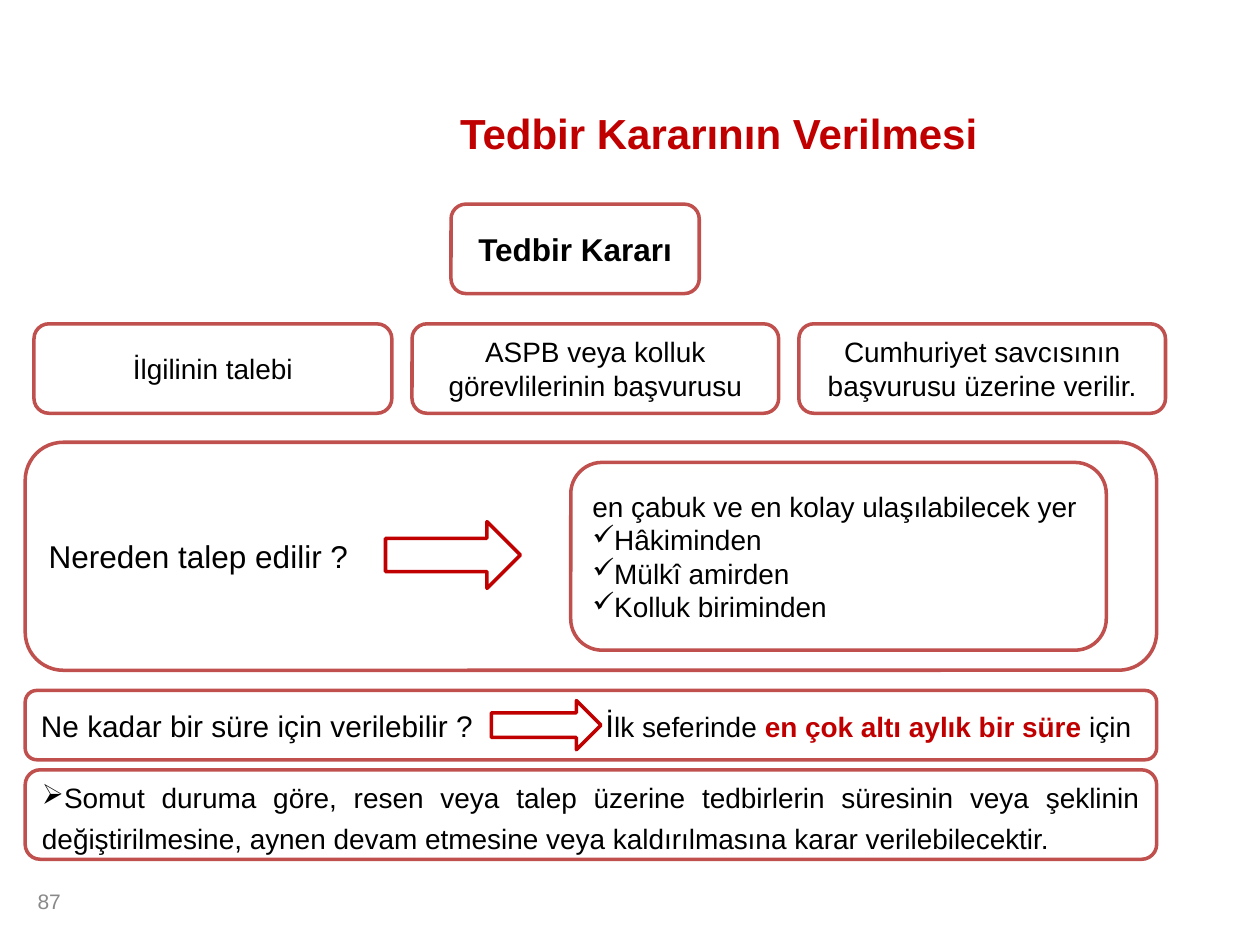
import pptx
import pptx.util
import pptx.dml.color
import pptx.enum.shapes
import pptx.enum.text
import pptx.oxml.ns
from lxml import etree

RED = pptx.dml.color.RGBColor(0xC0, 0x00, 0x00)
BORDER = pptx.dml.color.RGBColor(0xC0, 0x50, 0x4D)
BLACK = pptx.dml.color.RGBColor(0x00, 0x00, 0x00)
WHITE = pptx.dml.color.RGBColor(0xFF, 0xFF, 0xFF)
GREY = pptx.dml.color.RGBColor(0x89, 0x89, 0x89)

LEFT = pptx.enum.text.PP_ALIGN.LEFT
CENTER = pptx.enum.text.PP_ALIGN.CENTER
JUSTIFY = pptx.enum.text.PP_ALIGN.JUSTIFY
TOP = pptx.enum.text.MSO_ANCHOR.TOP
MIDDLE = pptx.enum.text.MSO_ANCHOR.MIDDLE
SHAPES = pptx.enum.shapes.MSO_SHAPE

COLUMNS, ROWS = 100, 75  # grid cells across and down the slide


class SlideBuilder:
    font = "Arial"
    line_width = pptx.util.Pt(2)

    def __init__(self, presentation):
        self.cell_width = presentation.slide_width / COLUMNS
        self.cell_height = presentation.slide_height / ROWS
        self.slide = presentation.slides.add_slide(presentation.slide_layouts[5])

    def area(self, column, row, columns, rows):
        """Turn grid cells into left, top, width and height."""
        return (round(column * self.cell_width), round(row * self.cell_height),
                round(columns * self.cell_width), round(rows * self.cell_height))

    def run(self, paragraph, text, size=16, color=BLACK, bold=False):
        run = paragraph.add_run()
        run.text = text
        run.font.name = self.font
        run.font.size = pptx.util.Pt(size)
        run.font.color.rgb = color
        run.font.bold = bold

    def paragraph(self, frame, runs, align=LEFT, bullet=None, tab=None, spacing=None):
        """Fill the empty first paragraph, or add one; each run is a tuple."""
        first = frame.paragraphs[0]
        paragraph = frame.add_paragraph() if first.runs else first
        paragraph.alignment = align
        if spacing:
            paragraph.line_spacing = spacing
        properties = paragraph._p.get_or_add_pPr()
        qn = pptx.oxml.ns.qn
        if bullet:
            properties.set("marL", "0")
            properties.set("indent", "0")
            etree.SubElement(properties, qn("a:buChar"), char=bullet)
        if tab:
            stops = etree.SubElement(properties, qn("a:tabLst"))
            etree.SubElement(stops, qn("a:tab"),
                             pos=str(round(tab * self.cell_width)), algn="l")
        for run in runs:
            self.run(paragraph, *run)

    def frame(self, shape, anchor=MIDDLE):
        frame = shape.text_frame
        frame.word_wrap = True
        frame.auto_size = pptx.enum.text.MSO_AUTO_SIZE.NONE
        frame.vertical_anchor = anchor
        return frame

    def title(self, area, text):
        title = self.slide.shapes.title
        title.left, title.top, title.width, title.height = self.area(*area)
        self.paragraph(self.frame(title, TOP), [(text, 24, RED, True)], CENTER)

    def label(self, area, *run):
        box = self.slide.shapes.add_textbox(*self.area(*area))
        self.paragraph(self.frame(box), [run])

    def outline(self, kind, area, color):
        shape = self.slide.shapes.add_shape(kind, *self.area(*area))
        shape.shadow.inherit = False
        shape.line.color.rgb = color
        shape.line.width = self.line_width
        return shape

    def box(self, area, runs, align=LEFT, **options):
        shape = self.outline(SHAPES.ROUNDED_RECTANGLE, area, BORDER)
        shape.fill.solid()
        shape.fill.fore_color.rgb = WHITE
        frame = self.frame(shape)
        self.paragraph(frame, runs, align, **options)
        return frame

    def arrow(self, area):
        self.outline(SHAPES.RIGHT_ARROW, area, RED).fill.background()


def main():
    presentation = pptx.Presentation()
    presentation.slide_width = pptx.util.Inches(10)
    presentation.slide_height = pptx.util.Inches(7.5)
    builder = SlideBuilder(presentation)

    # Title, slide number and the decision at the top
    builder.title((29.5, 8, 55.1, 5.1), "Tedbir Kararının Verilmesi")
    builder.label((2, 69.5, 23.3, 4), "87", 12, GREY)
    builder.box((35.8, 16.2, 19.7, 7.1), [("Tedbir Kararı", 18, BLACK, True)], CENTER)

    # Three ways to start the process
    column, gap = 2.7, 1.6
    for text, width in (("İlgilinin talebi", 28.4),
                        ("ASPB veya kolluk görevlilerinin başvurusu", 29.1),
                        ("Cumhuriyet savcısının başvurusu üzerine verilir.", 29.1)):
        builder.box((column, 25.7, width, 7.1), [(text,)], CENTER)
        column += width + gap

    # Where to apply
    left, width = 2, 89.8
    builder.box((left, 35.1, width, 18.1), [("Nereden talep edilir ?", 18)])
    builder.arrow((30.6, 41.4, 10.7, 5.3))
    places = builder.box((45.3, 36.7, 42.5, 14.9),
                         [("en çabuk ve en kolay ulaşılabilecek yer",)])
    for place in ("Hâkiminden", "Mülkî amirden", "Kolluk biriminden"):
        builder.paragraph(places, [(place,)], JUSTIFY, bullet="✓")

    # How long it lasts
    builder.box((left, 54.8, width, 5.5),
                [("Ne kadar bir süre için verilebilir ?\t", 17), ("İ", 18),
                 ("lk seferinde ",), ("en çok altı aylık bir süre ", 16, RED, True),
                 ("için",)], tab=44.8)
    builder.arrow((39, 55.6, 8.7, 3.9))

    # Later changes
    builder.box((left, 61.1, width, 7.1),
                [("Somut duruma göre, resen veya talep üzerine tedbirlerin süresinin "
                  "veya şeklinin değiştirilmesine, aynen devam etmesine veya "
                  "kaldırılmasına karar verilebilecektir.",)],
                JUSTIFY, bullet="➢", spacing=1.2)

    presentation.save("out.pptx")


if __name__ == "__main__":
    main()
